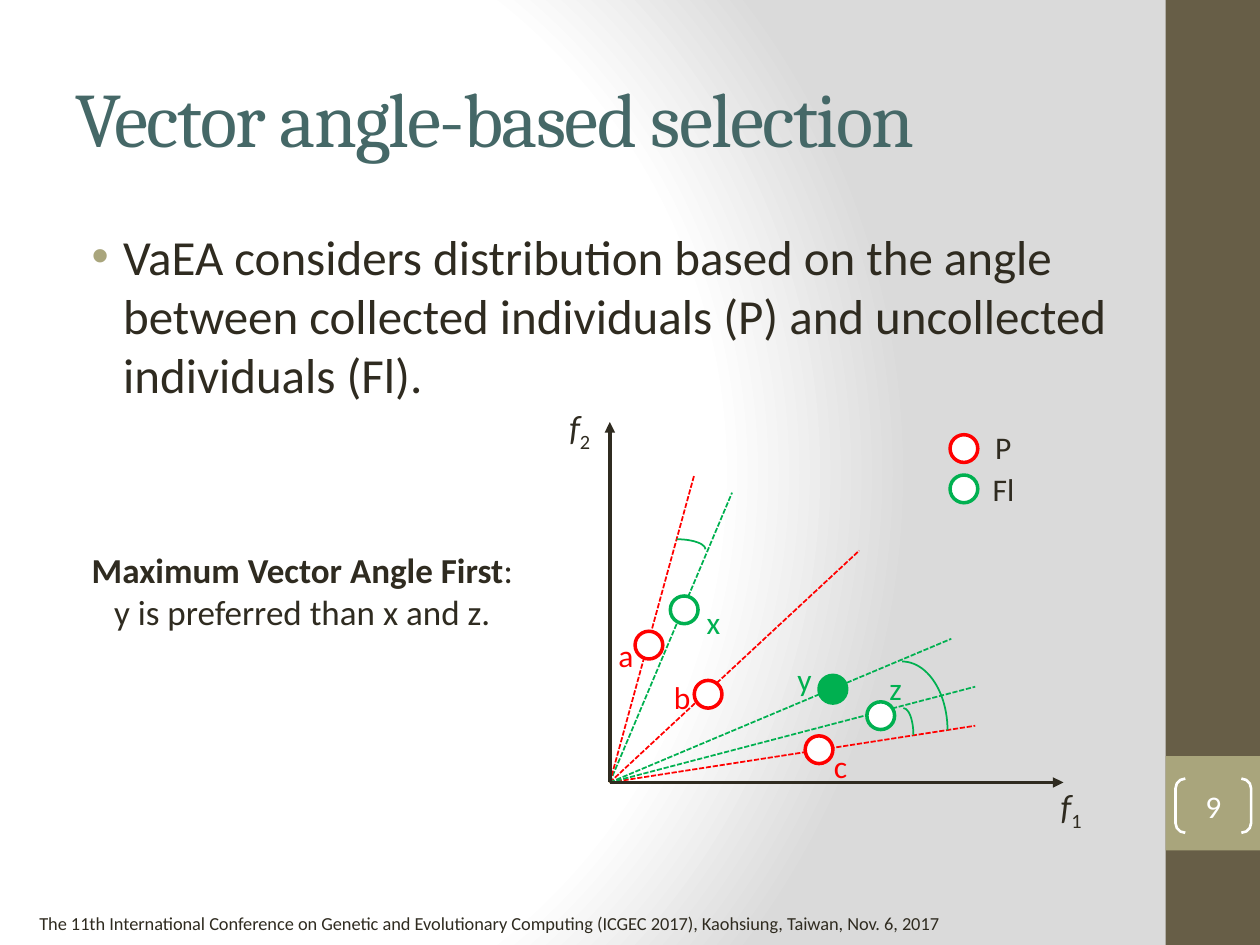
from lxml import etree
from pptx import Presentation
from pptx.dml.color import RGBColor
from pptx.enum import dml, shapes, text
from pptx.oxml import parse_xml
from pptx.oxml.ns import nsdecls, qn
from pptx.util import Pt

COLORS = {
    "ink": "2F2B20", "title": "456867", "band": "675E47", "accent": "A9A57C",
    "red": "FF0000", "green": "00B050", "white": "FFFFFF", "shade": "DADADA",
}
RGB = {name: RGBColor.from_string(value) for name, value in COLORS.items()}

presentation = Presentation()
column = presentation.slide_width // 10
row = column
presentation.slide_height = int(row * 7.5)
slide = presentation.slides.add_slide(presentation.slide_layouts[5])
items = slide.shapes


def add_shape(kind, left, top, width, height, fill=None, line=None, weight=1):
    shape = items.add_shape(kind, int(left * column), int(top * row),
                            int(width * column), int(height * row))
    shape.shadow.inherit = False
    if fill:
        shape.fill.solid()
        shape.fill.fore_color.rgb = RGB[fill]
    else:
        shape.fill.background()
    if line:
        shape.line.color.rgb = RGB[line]
        shape.line.width = Pt(weight)
    else:
        shape.line.fill.background()
    return shape


def add_text(words, left, top, width, height, size, color="ink", wrap=True):
    box = items.add_textbox(int(left * column), int(top * row),
                            int(width * column), int(height * row))
    box.text_frame.word_wrap = wrap
    paragraph = box.text_frame.paragraphs[0]
    for word in words:
        paragraph.add_run().text = word
    paragraph.font.name = "Calibri"
    paragraph.font.size = Pt(size)
    paragraph.font.color.rgb = RGB[color]
    return paragraph


slide.background.fill.gradient()
gradient = slide.background.fill._xPr.find(qn("a:gradFill"))
stops = "".join(f'<a:gs pos="{share * 1000}"><a:srgbClr val="{COLORS[name]}"/></a:gs>'
                for share, name in ((0, "white"), (75, "white"), (100, "shade")))
gradient.getparent().replace(gradient, parse_xml(
    f'<a:gradFill {nsdecls("a")} rotWithShape="1"><a:gsLst>{stops}</a:gsLst>'
    '<a:path path="circle"><a:fillToRect l="20000" t="50000" r="100000" b="50000"/>'
    '</a:path></a:gradFill>'))

add_shape(shapes.MSO_SHAPE.RECTANGLE, 9.25, 0, 0.75, 7.5, "band")
add_shape(shapes.MSO_SHAPE.RECTANGLE, 9.25, 6, 0.75, 0.75, "accent")
footer = add_text(["The 11th International Conference on Genetic and Evolutionary Computing "
                   "(ICGEC 2017), Kaohsiung, Taiwan, Nov. 6, 2017"],
                  0.12, 7.19, 7.44, 0.28, 10.5)
footer.alignment = text.PP_ALIGN.RIGHT

title = items.title
title.left, title.top = int(0.5 * column), int(0.3 * row)
title.width, title.height = int(8.33 * column), int(1.25 * row)
title.text_frame.text = "Vector angle-based selection"
title.text_frame.vertical_anchor = text.MSO_ANCHOR.MIDDLE
heading = title.text_frame.paragraphs[0]
heading.alignment = text.PP_ALIGN.LEFT
heading.font.name = "Cambria"
heading.font.size = Pt(44)
heading.font.color.rgb = RGB["title"]
heading.runs[0].font._element.set("spc", "-100")

body = add_text(["VaEA considers distribution based on the angle between collected "
                 "individuals (P) and uncollected individuals (Fl)."],
                0.5, 1.75, 8.74, 1.67, 28)
rule = add_text(["Maximum Vector Angle First", ": y is preferred than x and z."],
                0.58, 4.3, 3.64, 0.52, 20)
rule.alignment = text.PP_ALIGN.CENTER
rule.runs[0].font.bold = True
for paragraph in (body, rule):
    properties = paragraph._p.get_or_add_pPr()
    properties.insert(0, parse_xml(
        f'<a:spcBef {nsdecls("a")}><a:spcPct val="20000"/></a:spcBef>'))
properties = body._p.get_or_add_pPr()
properties.set("marL", str(int(0.38 * column)))
properties.set("indent", str(int(-0.25 * column)))
for offset, bullet in enumerate((
        f'<a:buClr {nsdecls("a")}><a:srgbClr val="{COLORS["accent"]}"/></a:buClr>',
        f'<a:buFont {nsdecls("a")} typeface="Arial"/>',
        f'<a:buChar {nsdecls("a")} char="•"/>'), start=1):
    properties.insert(offset, parse_xml(bullet))

badge = add_shape(shapes.MSO_SHAPE.DOUBLE_BRACKET, 9.33, 6.18, 0.6, 0.43, None, "white", 1.5)
badge.adjustments[0] = 0.18
frame = badge.text_frame
frame.margin_left = frame.margin_right = frame.margin_top = frame.margin_bottom = 0
frame.vertical_anchor = text.MSO_ANCHOR.MIDDLE
frame.text = "9"
number = frame.paragraphs[0]
number.alignment = text.PP_ALIGN.CENTER
number.font.name = "Calibri"
number.font.size = Pt(18)
number.font.color.rgb = RGB["white"]

origin_x, origin_y = 4.84, 6.21
for end_x, end_y, color, is_axis in (
        (5.81, 3.91, "green", False), (6.82, 4.37, "red", False),
        (5.51, 3.77, "red", False), (7.74, 5.76, "red", False),
        (7.74, 5.45, "green", False), (7.55, 5.07, "green", False),
        (8.44, origin_y, "ink", True), (origin_x, 3.35, "ink", True)):
    connector = items.add_connector(
        shapes.MSO_CONNECTOR.STRAIGHT, int(origin_x * column), int(origin_y * row),
        int(end_x * column), int(end_y * row))
    connector.line.color.rgb = RGB[color]
    connector.line.width = Pt(2 if is_axis else 1)
    if is_axis:
        etree.SubElement(connector.line._get_or_add_ln(), qn("a:tailEnd"), type="triangle")
    else:
        connector.line.dash_style = dml.MSO_LINE.SQUARE_DOT
    etree.SubElement(connector._element.spPr, qn("a:effectLst"))

for left, top, index in ((8.32, 6.18, "1"), (4.42, 3.17, "2")):
    letter, subscript = add_text(["f", index], left, top, 0.56, 0.44, 20).runs
    letter.font.italic = True
    subscript.font._element.set("baseline", "-25000")

for left, top, width, height in ((5.14, 4.28, 0.46, 0.16), (7.09, 5.62, 0.16, 0.43),
                                 (6.8, 5.25, 0.72, 1.09)):
    add_shape(shapes.MSO_SHAPE.ARC, left, top, width, height, None, "green")

for left, top, fill, color in (
        (5.04, 5.01, "white", "red"), (5.32, 4.73, "white", "green"),
        (5.51, 5.4, "white", "red"), (6.5, 5.36, "green", "green"),
        (6.88, 5.57, "white", "green"), (6.39, 5.84, "white", "red"),
        (7.54, 3.45, "white", "red"), (7.54, 3.77, "white", "green")):
    add_shape(shapes.MSO_SHAPE.OVAL, left, top, 0.22, 0.22, fill, color, 2)

for label, left, top, width, color in (
        ("a", 4.81, 5, 0.32, "red"), ("b", 5.25, 5.33, 0.34, "red"),
        ("c", 6.52, 5.88, 0.31, "red"), ("x", 5.51, 4.74, 0.31, "green"),
        ("y", 6.23, 5.19, 0.32, "green"), ("z", 6.96, 5.26, 0.3, "green"),
        ("P", 7.8, 3.35, 0.33, "ink"), ("Fl", 7.78, 3.68, 0.38, "ink")):
    add_text([label], left, top, width, 0.4, 18, color, wrap=False)

presentation.save("out.pptx")
